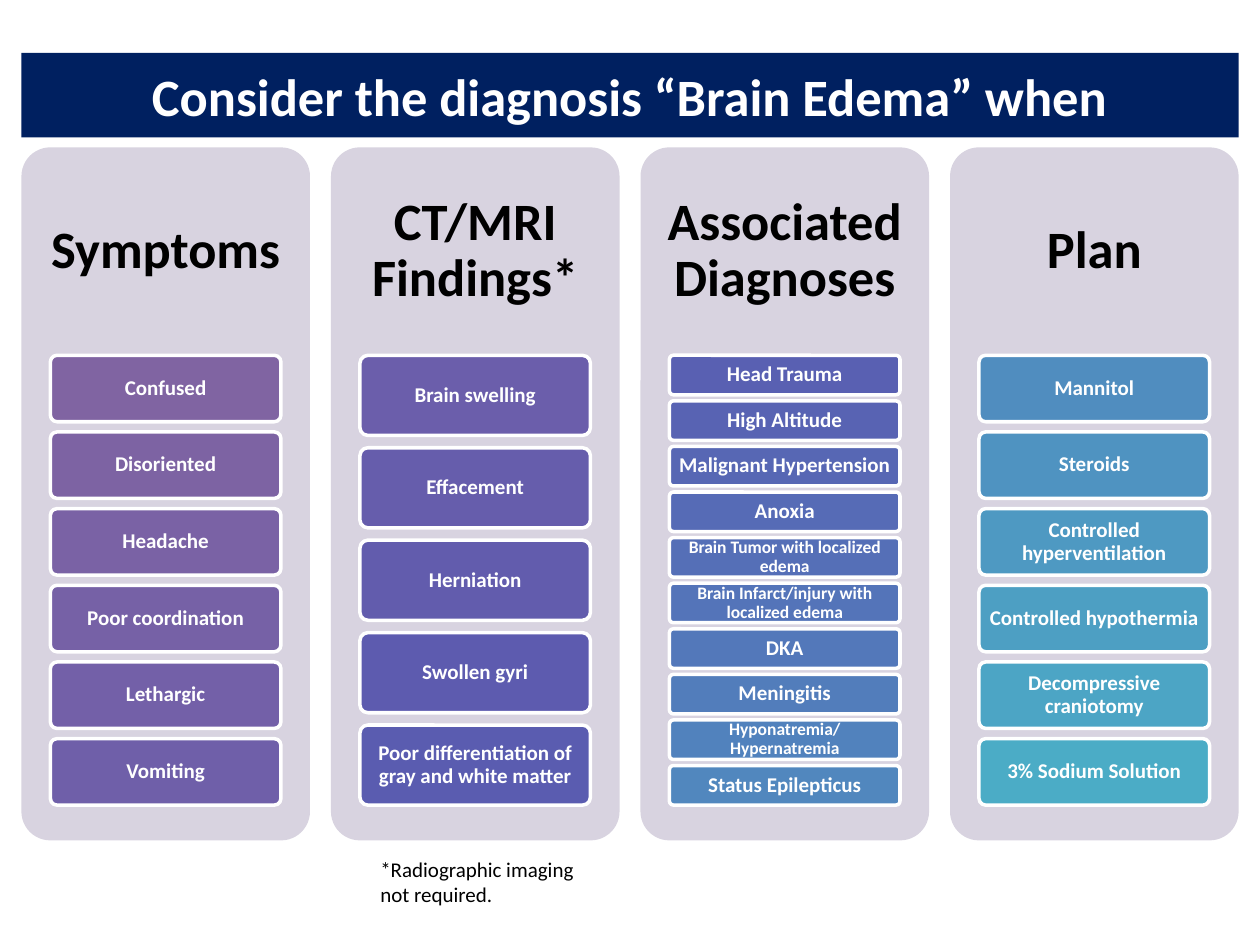
from colorsys import hls_to_rgb, rgb_to_hls

from lxml.etree import SubElement
from pptx import Presentation
from pptx.dml.color import RGBColor
from pptx.enum.shapes import MSO_SHAPE
from pptx.enum.text import MSO_ANCHOR, MSO_AUTO_SIZE, PP_ALIGN
from pptx.oxml.ns import qn
from pptx.util import Inches, Pt

NAVY = RGBColor(0x00, 0x20, 0x60)
LAVENDER = RGBColor(0xD8, 0xD3, 0xE0)
PURPLE = RGBColor(0x80, 0x64, 0xA2)
TEAL = RGBColor(0x4B, 0xAC, 0xC6)
WHITE = RGBColor(0xFF, 0xFF, 0xFF)
BLACK = RGBColor(0x00, 0x00, 0x00)

LEFT, TOTAL_WIDTH = 0.17, 9.66
COLUMN_TOP, COLUMN_WIDTH, COLUMN_HEIGHT = 1.17, 2.29, 5.5
HEADING_HEIGHT = 1.65
ITEM_TOP, ITEM_WIDTH, ITEMS_HEIGHT = 2.82, 1.83, 3.57
GAP_RATIO = 2 / 13  # gap between items relative to item height

COLUMNS = [
    ("Symptoms", ["Confused", "Disoriented", "Headache", "Poor coordination",
                  "Lethargic", "Vomiting"]),
    ("CT/MRI Findings*", ["Brain swelling", "Effacement", "Herniation", "Swollen gyri",
                          "Poor differentiation of gray and white matter"]),
    ("Associated Diagnoses", ["Head Trauma", "High Altitude", "Malignant Hypertension",
                              "Anoxia", "Brain Tumor with localized edema",
                              "Brain Infarct/injury with localized edema", "DKA",
                              "Meningitis", "Hyponatremia/ Hypernatremia",
                              "Status Epilepticus"]),
    ("Plan", ["Mannitol", "Steroids", "Controlled hyperventilation",
              "Controlled hypothermia", "Decompressive craniotomy",
              "3% Sodium Solution"]),
]
SMALL_ITEMS = {"Brain Tumor with localized edema",
               "Brain Infarct/injury with localized edema",
               "Hyponatremia/ Hypernatremia"}


def blend(start, end, fraction):
    """Mix two colours along hue, lightness and saturation."""
    first, last = (rgb_to_hls(*(part / 255 for part in colour)) for colour in (start, end))
    mixed = hls_to_rgb(*(a + (b - a) * fraction for a, b in zip(first, last)))
    return RGBColor(*(round(part * 255) for part in mixed))


def write_text(shape, text, size, color, bold=True, align=PP_ALIGN.CENTER,
               anchor=MSO_ANCHOR.MIDDLE, margins=(0.1, 0.05), line_spacing=1.0):
    frame = shape.text_frame
    frame.word_wrap = True
    frame.auto_size = MSO_AUTO_SIZE.NONE
    frame.vertical_anchor = anchor
    frame.margin_left = frame.margin_right = Inches(margins[0])
    frame.margin_top = frame.margin_bottom = Inches(margins[1])
    paragraph = frame.paragraphs[0]
    paragraph.alignment = align
    paragraph.line_spacing = line_spacing
    run = paragraph.add_run()
    run.text = text
    run.font.name = "Calibri"
    run.font.size = Pt(size)
    run.font.bold = bold
    run.font.color.rgb = color


def add_title(slide, text):
    title = slide.shapes.title
    title.left, title.top = Inches(LEFT), Inches(0.42)
    title.width, title.height = Inches(TOTAL_WIDTH), Inches(0.67)
    geometry = SubElement(title.element.spPr, qn("a:prstGeom"), prst="roundRect")
    SubElement(geometry, qn("a:avLst"))
    title.fill.solid()
    title.fill.fore_color.rgb = NAVY
    write_text(title, text, 30, WHITE)


def add_rounded_box(slide, left, top, width, height, fill, outlined=False):
    box = slide.shapes.add_shape(MSO_SHAPE.ROUNDED_RECTANGLE, Inches(left), Inches(top),
                                 Inches(width), Inches(height))
    box.shadow.inherit = False
    box.adjustments[0] = 0.1
    box.fill.solid()
    box.fill.fore_color.rgb = fill
    if outlined:
        box.line.color.rgb = WHITE
        box.line.width = Pt(2)
    else:
        box.line.fill.background()
    return box


def add_text_box(slide, left, top, width, height, text, size, **options):
    box = slide.shapes.add_textbox(Inches(left), Inches(top), Inches(width), Inches(height))
    write_text(box, text, size, BLACK, **options)


def add_column(slide, left, heading, items, colors):
    add_rounded_box(slide, left, COLUMN_TOP, COLUMN_WIDTH, COLUMN_HEIGHT, LAVENDER)
    add_text_box(slide, left, COLUMN_TOP, COLUMN_WIDTH, HEADING_HEIGHT, heading, 30,
                 margins=(0.12, 0.12), line_spacing=0.9)
    height = ITEMS_HEIGHT / (len(items) + (len(items) - 1) * GAP_RATIO)
    item_left = left + (COLUMN_WIDTH - ITEM_WIDTH) / 2
    for row, item in enumerate(items):
        top = ITEM_TOP + row * height * (1 + GAP_RATIO)
        box = add_rounded_box(slide, item_left, top, ITEM_WIDTH, height, next(colors),
                              outlined=True)
        small = item in SMALL_ITEMS
        write_text(box, item, 10 if small else 12, WHITE,
                   margins=(0.03, 0.02 if small else 0.03), line_spacing=0.9)


def main():
    presentation = Presentation()
    presentation.slide_width, presentation.slide_height = Inches(10), Inches(7.5)
    slide = presentation.slides.add_slide(presentation.slide_layouts[5])
    add_title(slide, "Consider the diagnosis “Brain Edema” when")

    item_count = sum(len(items) for _, items in COLUMNS)
    colors = (blend(PURPLE, TEAL, index / (item_count - 1)) for index in range(item_count))
    pitch = (TOTAL_WIDTH - COLUMN_WIDTH) / (len(COLUMNS) - 1)
    for index, (heading, items) in enumerate(COLUMNS):
        add_column(slide, LEFT + index * pitch, heading, items, colors)

    add_text_box(slide, 2.92, 6.75, 1.75, 0.5, "*Radiographic imaging not required.", 12,
                 bold=False, align=PP_ALIGN.LEFT, anchor=MSO_ANCHOR.TOP)
    presentation.save("out.pptx")


if __name__ == "__main__":
    main()
